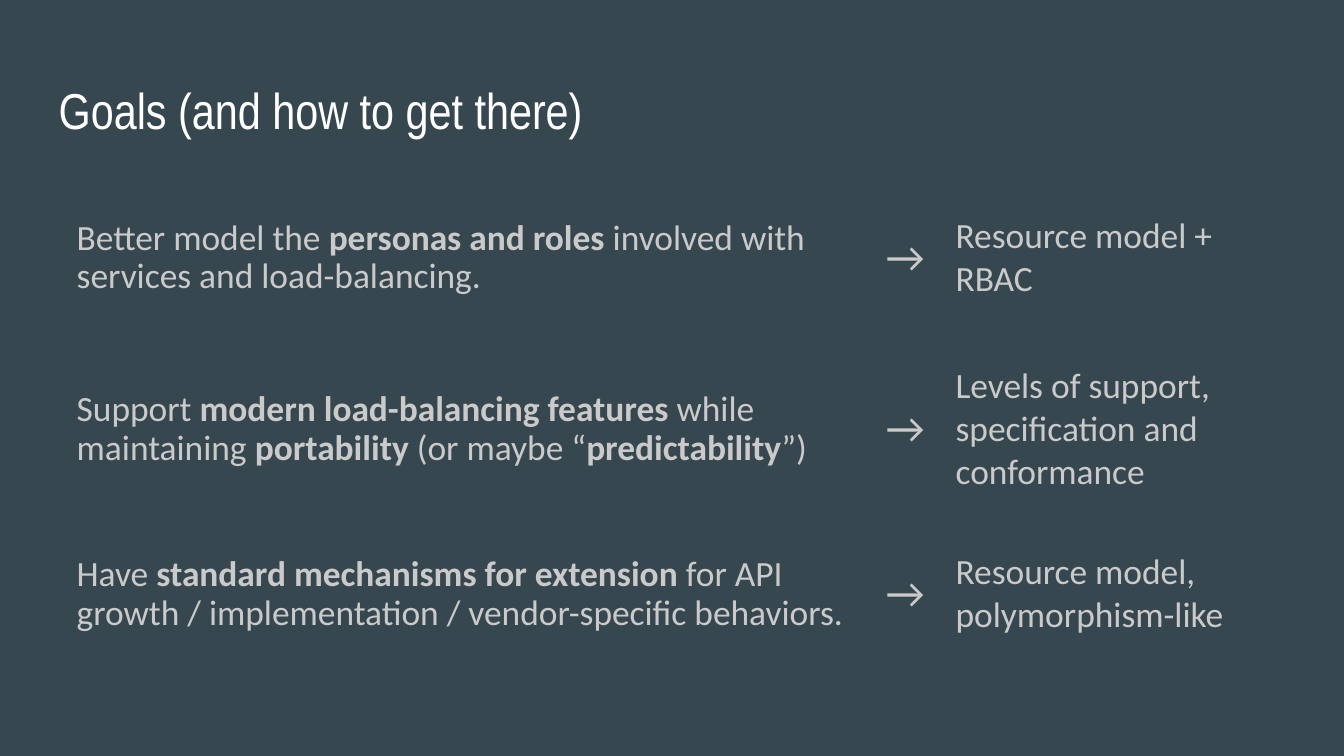
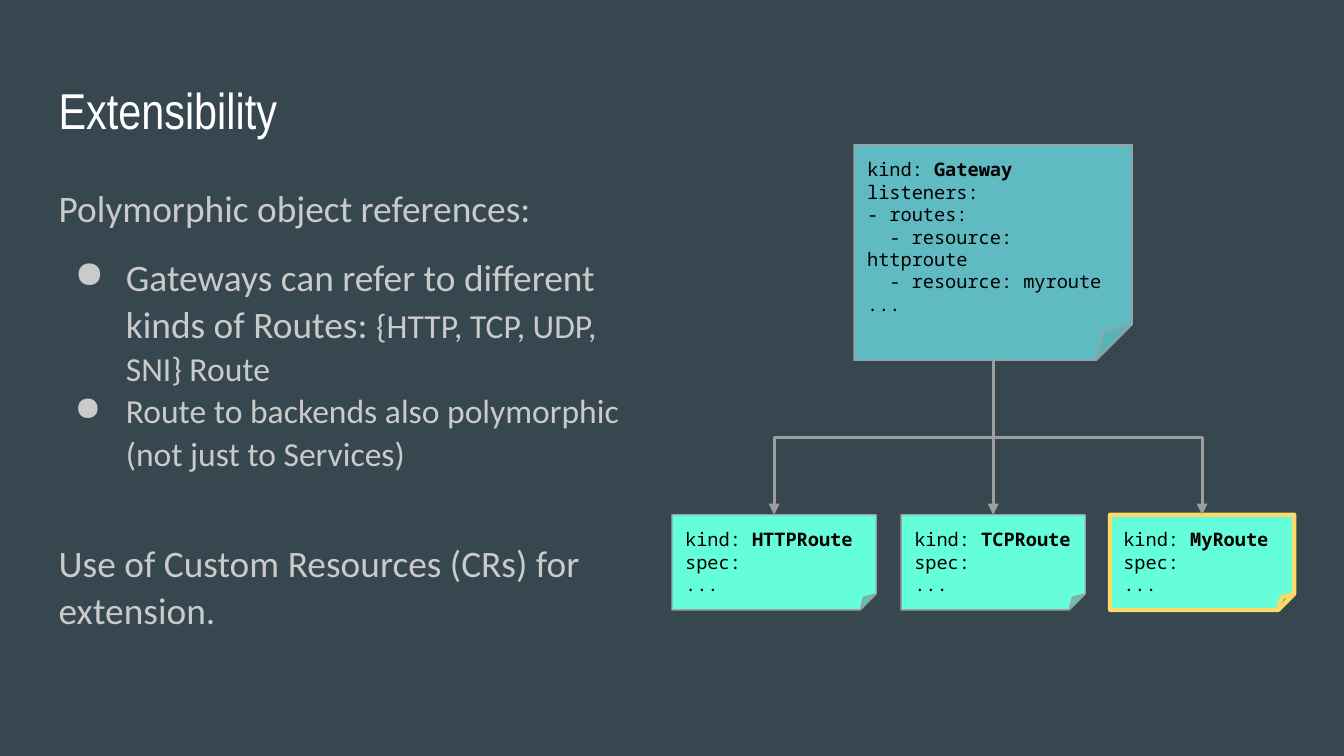
from dataclasses import dataclass

from lxml import etree
from pptx import Presentation
from pptx.dml.color import RGBColor
from pptx.enum.shapes import MSO_CONNECTOR, MSO_SHAPE
from pptx.enum.text import MSO_ANCHOR, PP_ALIGN
from pptx.oxml.ns import qn
from pptx.util import Cm, Pt

ELBOW = MSO_CONNECTOR.ELBOW
FOLD = MSO_SHAPE.FOLDED_CORNER
TOP, MIDDLE = MSO_ANCHOR.TOP, MSO_ANCHOR.MIDDLE
LEFT = PP_ALIGN.LEFT
PLAIN_GRID = "{2D5ABB26-0587-4C30-8999-92F81FD0307C}"
BOTTOM_SITE, TOP_SITE = 2, 0


@dataclass(frozen=True)
class Theme:
    """Colours, fonts and type sizes of the deck."""
    back: str = "37474F"
    white: str = "FFFFFF"
    text: str = "CACACA"
    ink: str = "000000"
    edge: str = "9E9E9E"
    mark: str = "FFD966"
    gate: str = "6CDFE5"
    route: str = "64FFDA"
    head_font: str = "Arial Narrow"
    body_font: str = "Calibri"
    code_font: str = "Noto Sans Mono"
    head: int = 27
    arrow: int = 23
    lead: int = 20
    goal: int = 19
    item: int = 18
    code: int = 10


T = Theme()

GOALS = [
    (["Better model the ", "*personas and roles",
      " involved with services and load-balancing."],
     "Resource model + RBAC"),
    (["Support ", "*modern load-balancing features", " while maintaining ",
      "*portability", " (or maybe “", "*predictability", "”)"],
     "Levels of support, specification and conformance"),
    (["Have ", "*standard mechanisms for extension",
      " for API growth / implementation / vendor-specific behaviors."],
     "Resource model, polymorphism-like"),
]


def rgb(code):
    """Turn a hex code into a colour."""
    return RGBColor.from_string(code)


def write(para, parts, size, font=T.body_font, color=T.text):
    """Add runs to a paragraph; a leading star makes a run bold."""
    para.alignment = LEFT
    for part in parts:
        run = para.add_run()
        run.text = part.removeprefix("*")
        run.font.bold = part.startswith("*")
        run.font.name = font
        run.font.size = Pt(size)
        run.font.color.rgb = rgb(color)


def space(para, line=None, before=0, after=0):
    """Set the spacing of a paragraph."""
    para.line_spacing = line
    para.space_before = Pt(before)
    para.space_after = Pt(after)


def indent(para, margin, first):
    """Set the left margin and first-line indent of a paragraph."""
    props = para._p.get_or_add_pPr()
    props.set("marL", str(Cm(margin)))
    props.set("indent", str(Cm(first)))
    return props


def bullet(para):
    """Give a paragraph a round hanging bullet."""
    props = indent(para, 1.27, -0.97)
    color = etree.SubElement(props, qn("a:buClr"))
    etree.SubElement(color, qn("a:srgbClr")).set("val", T.text)
    etree.SubElement(props, qn("a:buChar")).set("char", "●")


def setup(frame, inset=0.25):
    """Wrap a text frame from the top with even insets."""
    frame.word_wrap = True
    frame.vertical_anchor = TOP
    frame.margin_left = frame.margin_right = Cm(inset)
    frame.margin_top = frame.margin_bottom = Cm(inset)
    return frame


def lines(frame):
    """Yield the first paragraph, then new ones without end."""
    yield frame.paragraphs[0]
    while True:
        yield frame.add_paragraph()


def textbox(slide, left, top, width, height):
    """Add a wrapped text box and return its frame."""
    box = slide.shapes.add_textbox(Cm(left), Cm(top), Cm(width), Cm(height))
    return setup(box.text_frame)


def page(deck, title):
    """Add a dark slide with its title."""
    slide = deck.slides.add_slide(deck.slide_layouts[6])
    slide.background.fill.solid()
    slide.background.fill.fore_color.rgb = rgb(T.back)
    frame = textbox(slide, 0.86, 1.24, 23.67, 1.6)
    write(frame.paragraphs[0], [title], T.head, T.head_font, T.white)
    return slide


def goal_table(slide):
    """Add the table that leads from each goal to its means."""
    widths, heights = (15.29, 1.32, 6.12), (3.35, 3.12, 3.12)
    frame = slide.shapes.add_table(
        len(heights), len(widths), Cm(1.27), Cm(3.2),
        Cm(sum(widths)), Cm(sum(heights)))
    table = frame.table
    table.first_row = table.horz_banding = False
    table._tbl.tblPr.find(qn("a:tableStyleId")).text = PLAIN_GRID
    for col, width in zip(table.columns, widths):
        col.width = Cm(width)
    for row, height, (goal, means) in zip(table.rows, heights, GOALS):
        row.height = Cm(height)
        parts = [(goal, T.goal), (["→"], T.arrow), ([means], T.goal)]
        for cell, (runs, size) in zip(row.cells, parts):
            cell.fill.background()
            cell.vertical_anchor = MIDDLE
            cell.margin_left = cell.margin_right = Cm(0.18)
            cell.margin_top = cell.margin_bottom = Cm(0.18)
            write(cell.text_frame.paragraphs[0], runs, size)
        space(row.cells[0].text_frame.paragraphs[0], 0.9, 8)


def points(slide):
    """Add the body text on object references."""
    paras = lines(textbox(slide, 0.86, 3.2, 11.35, 9.25))
    para = next(paras)
    space(para, 1.05)
    write(para, ["Polymorphic object references:"], T.lead)
    para = next(paras)
    space(para, 1.05, 12)
    bullet(para)
    write(para, ["Gateways can refer to different kinds of Routes: "], T.lead)
    write(para, ["{HTTP, TCP, UDP, SNI} Route"], T.item)
    para = next(paras)
    space(para, 1.05)
    bullet(para)
    write(para, ["Route to backends also polymorphic (not just to Services)"],
          T.item)
    para = next(paras)
    space(para, 1.05, 35, 12)
    write(para, ["Use of Custom Resources (CRs) for extension."], T.lead)


def note(slide, place, kind, code, fill, edge=T.edge, weight=0.75):
    """Add a folded note with code; a leading tab indents a line."""
    shape = slide.shapes.add_shape(FOLD, *map(Cm, place))
    shape.shadow.inherit = False
    shape.fill.solid()
    shape.fill.fore_color.rgb = rgb(fill)
    shape.line.color.rgb = rgb(edge)
    shape.line.width = Pt(weight)
    paras = lines(setup(shape.text_frame))
    write(next(paras), ["kind: ", "*" + kind], T.code, T.code_font, T.ink)
    for text in code:
        para = next(paras)
        if text.startswith("\t"):
            indent(para, 0, 0.42)
        write(para, [text.strip()], T.code, T.code_font, T.ink)
    return shape


def fade(shape, share):
    """Set the opacity of a solid fill in percent."""
    color = shape._element.spPr.find(qn("a:solidFill"))[0]
    etree.SubElement(color, qn("a:alpha")).set("val", str(share * 1000))


def link(slide, start, end):
    """Join two notes with an elbow arrow that leaves downward."""
    wire = slide.shapes.add_connector(ELBOW, 0, 0, 0, 0)
    wire.begin_connect(start, BOTTOM_SITE)
    wire.end_connect(end, TOP_SITE)
    run, drop = wire.end_x - wire.begin_x, wire.end_y - wire.begin_y
    mid_x = (wire.begin_x + wire.end_x) // 2
    mid_y = (wire.begin_y + wire.end_y) // 2
    wire.begin_x, wire.end_x = mid_x - drop // 2, mid_x + drop // 2
    wire.begin_y, wire.end_y = mid_y + run // 2, mid_y - run // 2
    props = wire._element.spPr
    props.find(qn("a:xfrm")).set("rot", "5400000")
    wire.line.color.rgb = rgb(T.edge)
    wire.line.width = Pt(1.5)
    tail = etree.SubElement(wire.line._get_or_add_ln(), qn("a:tailEnd"))
    tail.set("type", "triangle")
    etree.SubElement(props, qn("a:effectLst"))


def route_tree(slide):
    """Draw the gateway and the routes it refers to."""
    gate = note(slide, (16.14, 2.74, 5.26, 4.07), "Gateway",
                ["listeners:", "- routes:", "\t- resource: httproute",
                 "\t- resource: myroute", "..."], T.gate)
    fade(gate, 76)
    left, gap = 12.7, 0.47
    routes = [("HTTPRoute", 3.86, T.edge, 0.75),
              ("TCPRoute", 3.48, T.edge, 0.75),
              ("MyRoute", 3.48, T.mark, 2.25)]
    for kind, width, edge, weight in routes:
        route = note(slide, (left, 9.73, width, 1.8), kind,
                     ["spec:", "..."], T.route, edge, weight)
        link(slide, gate, route)
        left += width + gap


def main():
    """Build and save the deck."""
    deck = Presentation()
    deck.slide_width, deck.slide_height = Cm(25.4), Cm(14.29)
    goal_table(page(deck, "Goals (and how to get there)"))
    slide = page(deck, "Extensibility")
    points(slide)
    route_tree(slide)
    deck.save("out.pptx")


if __name__ == "__main__":
    main()
